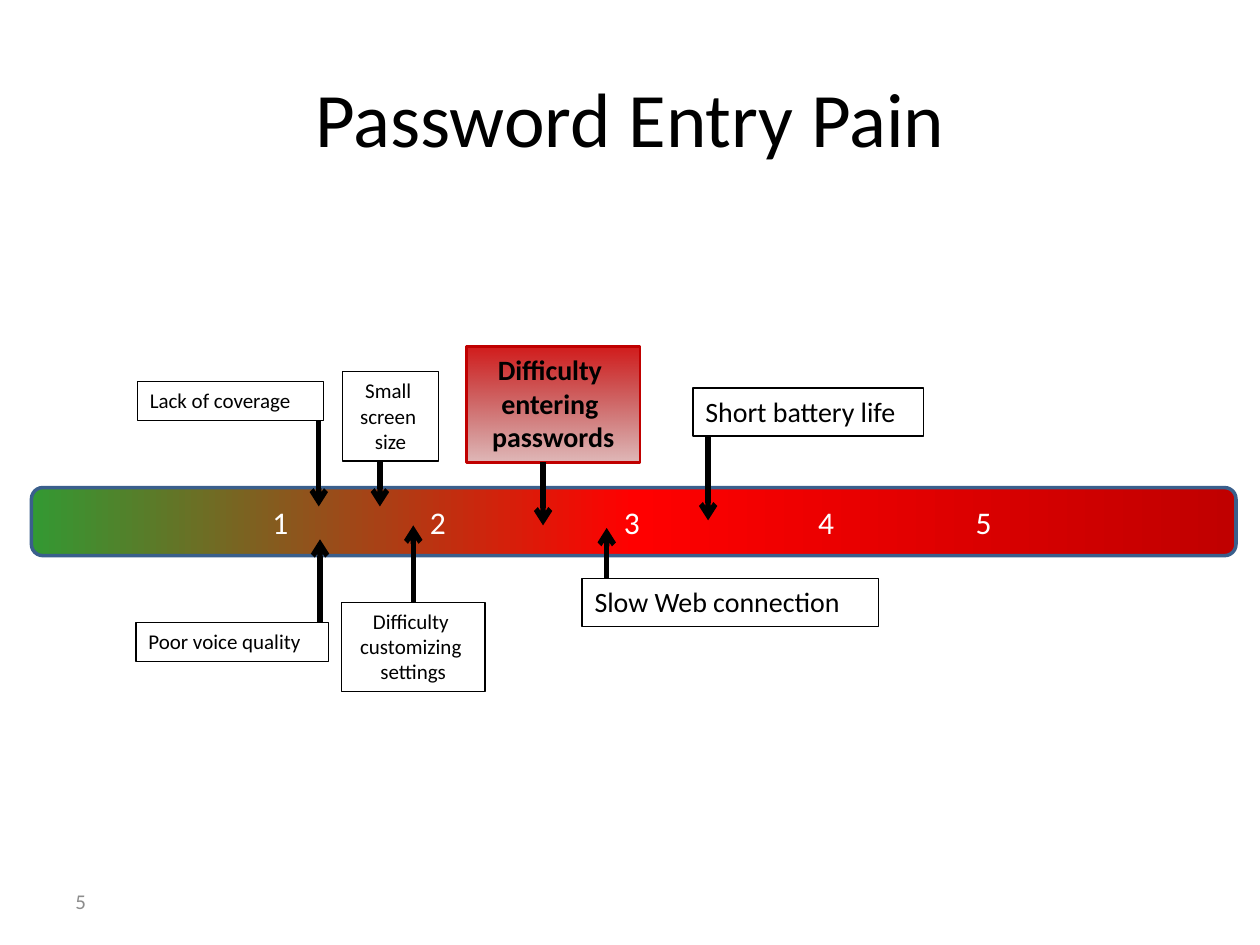
from dataclasses import dataclass

from lxml import etree
from pptx import Presentation
from pptx.dml.color import RGBColor
from pptx.enum import shapes, text
from pptx.oxml.ns import qn
from pptx.util import Inches, Pt

WIDTH, HEIGHT = Inches(10), Inches(7.5)
COLS, ROWS = 100, 75


@dataclass(frozen=True)
class Theme:
    """Colours, font and type sizes of the slide."""
    font: str = "Calibri"
    ink: str = "000000"
    muted: str = "8C8C8C"
    light: str = "FFFFFF"
    bar_line: str = "3A5F8C"
    focus_line: str = "C00000"
    bar_stops: tuple = ((0, "339933", 100), (50, "FF0000", 100), (100, "C00000", 100))
    focus_stops: tuple = ((0, "CC0000", 90), (100, "920000", 27))
    title: int = 44
    scale: int = 18
    large: int = 16
    small: int = 12


@dataclass(frozen=True)
class Label:
    """A pain point: its box, and the column and end row of its arrow."""
    lines: tuple
    box: tuple
    arrow_col: float
    tip_row: float
    size: int = Theme.small
    focus: bool = False


LABELS = (
    Label(("Short battery life",), (55, 30.8, 18.3, 3.8), 56.2, 41.3, Theme.large),
    Label(("Slow Web connection",), (46.2, 45.9, 23.5, 3.8), 48.15, 41.9, Theme.large),
    Label(("Lack of coverage",), (10.9, 30.3, 14.8, 3.1), 25.3, 40.2),
    Label(("Poor voice quality",), (10.8, 49.4, 15.3, 3.1), 25.4, 42.8),
    Label(("Small ", "screen ", "size"), (27.2, 29.5, 7.6, 7.1), 30.15, 40.2),
    Label(("Difficulty ", "customizing ", "settings"), (27.1, 47.8, 11.4, 7.1), 32.8, 41.7),
    Label(("Difficulty ", "entering ", "passwords"), (37, 27.5, 13.8, 9.2), 43.1, 41.7,
          Theme.large, True),
)
BAR = (2.5, 38.7, 95.6, 5.4)
SCALE_COLS = (22.3, 34.8, 50.2, 65.6, 78.1)
BAR_TEXT_COL = 2.8


def x(col):
    """Turn grid columns into a length."""
    return round(WIDTH * col / COLS)


def y(row):
    """Turn grid rows into a length."""
    return round(HEIGHT * row / ROWS)


def place(box):
    """Turn a grid box into left, top, width and height."""
    left, top, width, height = box
    return x(left), y(top), x(width), y(height)


def add_run(p, content, size, color, bold=False):
    """Add one formatted run to a paragraph."""
    r = p.add_run()
    r.text = content
    r.font.name, r.font.size, r.font.bold = Theme.font, Pt(size), bold
    r.font.color.rgb = RGBColor.from_string(color)


def set_line(sp, color, width):
    """Give a shape or connector a solid line."""
    sp.line.color.rgb = RGBColor.from_string(color)
    sp.line.width = Pt(width)


def set_gradient(sp, stops, angle):
    """Fill a shape with a linear gradient, the angle running clockwise."""
    sp.fill.gradient()
    sp.fill.gradient_angle = -angle % 360
    gs_list = sp._element.spPr.find(qn("a:gradFill")).find(qn("a:gsLst"))
    gs_list.clear()
    for position, color, alpha in stops:
        gs = etree.SubElement(gs_list, qn("a:gs"), pos=str(position * 1000))
        rgb = etree.SubElement(gs, qn("a:srgbClr"), val=color)
        etree.SubElement(rgb, qn("a:alpha"), val=str(alpha * 1000))


def add_title(slide, content):
    """Fill and place the title placeholder."""
    sp = slide.shapes.title
    sp.left, sp.top, sp.width, sp.height = place((5, 3, 90, 12.5))
    sp.text_frame.vertical_anchor = text.MSO_ANCHOR.MIDDLE
    p = sp.text_frame.paragraphs[0]
    p.alignment = text.PP_ALIGN.CENTER
    add_run(p, content, Theme.title, Theme.ink)


def add_page_number(slide, content):
    """Add the page number at the lower left."""
    sp = slide.shapes.add_textbox(*place((5, 69.5, 23.3, 4)))
    tf = sp.text_frame
    tf.word_wrap = True
    tf.vertical_anchor = text.MSO_ANCHOR.MIDDLE
    add_run(tf.paragraphs[0], content, Theme.small, Theme.muted)


def add_scale_bar(group):
    """Add the pain scale, its numbers set on centred tab stops."""
    sp = group.shapes.add_shape(shapes.MSO_SHAPE.ROUNDED_RECTANGLE, *place(BAR))
    sp.shadow.inherit = False
    set_gradient(sp, Theme.bar_stops, 0)
    set_line(sp, Theme.bar_line, 2)
    tf = sp.text_frame
    tf.margin_left = tf.margin_right = 0
    tf.vertical_anchor = text.MSO_ANCHOR.MIDDLE
    p = tf.paragraphs[0]
    p.alignment = text.PP_ALIGN.LEFT
    tabs = etree.SubElement(p._p.get_or_add_pPr(), qn("a:tabLst"))
    for number, col in enumerate(SCALE_COLS, 1):
        etree.SubElement(tabs, qn("a:tab"), pos=str(x(col - BAR_TEXT_COL)), algn="ctr")
        add_run(p, f"\t{number}", Theme.scale, Theme.light)


def add_box(group, label):
    """Add the bordered box of a pain point."""
    sp = group.shapes.add_textbox(*place(label.box))
    if label.focus:
        set_gradient(sp, Theme.focus_stops, 90)
        set_line(sp, Theme.focus_line, 1.5)
    else:
        set_line(sp, Theme.ink, 0.75)
    tf = sp.text_frame
    tf.word_wrap = True
    for i, line in enumerate(label.lines):
        p = tf.add_paragraph() if i else tf.paragraphs[0]
        if len(label.lines) > 1:
            p.alignment = text.PP_ALIGN.CENTER
        add_run(p, line, label.size, Theme.ink, label.focus)
    return sp


def add_arrow(group, label, sp):
    """Add the arrow from a box's facing edge to the scale."""
    left, top, width, height = label.box
    above = top < label.tip_row
    start = top + height if above else top
    col = x(label.arrow_col)
    cxn = group.shapes.add_connector(
        shapes.MSO_CONNECTOR.STRAIGHT, col, y(start), col, y(label.tip_row))
    if abs(label.arrow_col - left - width / 2) < 0.1:
        cxn.begin_connect(sp, 2 if above else 0)
    set_line(cxn, Theme.ink, 3)
    etree.SubElement(cxn.line._get_or_add_ln(), qn("a:tailEnd"), type="arrow")
    etree.SubElement(cxn._element.spPr, qn("a:effectLst"))


def main():
    """Build the slide and save it."""
    prs = Presentation()
    prs.slide_width, prs.slide_height = WIDTH, HEIGHT
    slide = prs.slides.add_slide(prs.slide_layouts[5])
    add_title(slide, "Password Entry Pain")
    add_page_number(slide, "5")
    group = slide.shapes.add_group_shape()
    add_scale_bar(group)
    for label in LABELS:
        add_arrow(group, label, add_box(group, label))
    prs.save("out.pptx")


if __name__ == "__main__":
    main()
